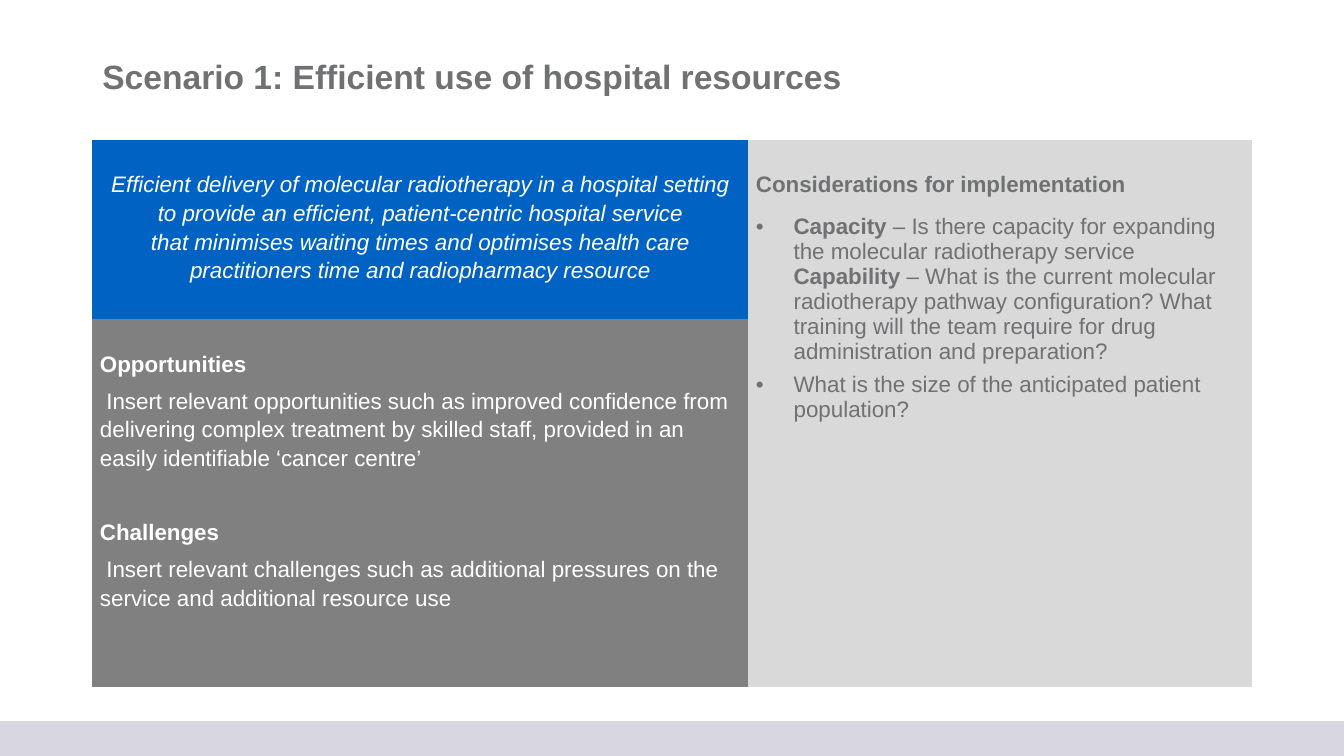
"""Build the hospital resources scenario slide."""
from copy import deepcopy
from dataclasses import dataclass

from lxml.etree import SubElement
from pptx import Presentation
from pptx.dml.color import RGBColor
from pptx.enum.shapes import MSO_SHAPE
from pptx.enum.text import MSO_ANCHOR, PP_ALIGN
from pptx.oxml.ns import qn
from pptx.util import Cm, Pt


@dataclass(frozen=True)
class Theme:
    font: str = "Arial"
    title_size: float = 24
    body_size: float = 16
    white: str = "FFFFFF"
    text: str = "707173"
    blue: str = "0063C3"
    dark: str = "808080"
    light: str = "D9D9D9"
    band: str = "D8D7E1"


THEME = Theme()
NO_GRID = "{2D5ABB26-0587-4C30-8999-92F81FD0307C}"


def style_run(r, color, size=THEME.body_size, bold=False, italic=False):
    r.font.name = THEME.font
    r.font.size = Pt(size)
    r.font.bold = bold
    r.font.italic = italic
    r.font.color.rgb = RGBColor.from_string(color)


def add_paragraph(tf, pieces, color, italic=False, spacing=1.15, before=6,
                  after=0, align=PP_ALIGN.LEFT):
    p = tf.paragraphs[0] if not tf.text else tf.add_paragraph()
    p.alignment = align
    p.line_spacing = spacing
    p.space_before, p.space_after = Pt(before), Pt(after)
    for text, bold in pieces:
        p.add_run().text = text
        style_run(p.runs[-1], color, bold=bold, italic=italic)
    return p


def set_indent(p, left, first, bullet=None):
    pPr = p._p.get_or_add_pPr()
    pPr.set("marL", str(Cm(left)))
    pPr.set("indent", str(Cm(first)))
    if bullet:
        SubElement(pPr, qn("a:buFont"), typeface=THEME.font)
        SubElement(pPr, qn("a:buChar"), char=bullet)


def add_band(s):
    sp = s.shapes.add_shape(MSO_SHAPE.RECTANGLE, 0, Cm(18.18), Cm(33.87), Cm(0.87))
    sp.shadow.inherit = False
    sp.fill.solid()
    sp.fill.fore_color.rgb = RGBColor.from_string(THEME.band)
    sp.line.color.rgb = RGBColor.from_string(THEME.band)
    sp.line.width = Pt(1)


def add_title(s, text):
    tf = s.shapes.add_textbox(Cm(2.33), Cm(1.02), Cm(29.21), Cm(1.9)).text_frame
    tf.word_wrap = True
    tf.vertical_anchor = MSO_ANCHOR.MIDDLE
    tf.text = text
    p = tf.paragraphs[0]
    p.line_spacing = 0.9
    style_run(p.runs[0], THEME.text, THEME.title_size, bold=True)


def add_grid(s, widths, heights, fills):
    frame = s.shapes.add_table(len(heights), len(widths), Cm(2.33), Cm(3.53),
                               Cm(sum(widths)), Cm(sum(heights)))
    table = frame.table
    table.first_row = table.horz_banding = False
    table._tbl.tblPr.find(qn("a:tableStyleId")).text = NO_GRID
    for col, width in zip(table.columns, widths):
        col.width = Cm(width)
    for row, height, colors in zip(table.rows, heights, fills):
        row.height = Cm(height)
        for cell, color in zip(row.cells, colors):
            cell.fill.solid()
            cell.fill.fore_color.rgb = RGBColor.from_string(color)
            cell.margin_left = cell.margin_right = Cm(0.19)
            cell.margin_top, cell.margin_bottom = Cm(0.73), 0
    return table


def fill_summary(tf):
    p = add_paragraph(tf, [(
        "Efficient delivery of molecular radiotherapy in a hospital setting to provide "
        "an efficient, patient-centric hospital service", False)],
        THEME.white, italic=True, before=0, after=6, align=PP_ALIGN.CENTER)
    p.add_line_break()
    r = p.add_run()
    r.text = ("that minimises waiting times and optimises health care practitioners "
              "time and radiopharmacy resource")
    style_run(r, THEME.white, italic=True)
    p._p.find(qn("a:br")).append(deepcopy(r._r.rPr))


def fill_sections(tf, sections):
    for i, (heading, body) in enumerate(sections):
        add_paragraph(tf, [(heading, True)], THEME.white, before=32.5 if i else 6)
        set_indent(add_paragraph(tf, [(body, False)], THEME.white), 0, 0.16)


def fill_considerations(tf, heading, items):
    add_paragraph(tf, [(heading, True)], THEME.text, after=6)
    for pieces in items:
        p = add_paragraph(tf, pieces, THEME.text, spacing=1.0)
        set_indent(p, 0.95, -0.95, "•")


def main():
    prs = Presentation()
    prs.slide_width, prs.slide_height = Cm(33.87), Cm(19.05)
    s = prs.slides.add_slide(prs.slide_layouts[6])
    add_band(s)
    add_title(s, "Scenario 1: Efficient use of hospital resources")
    table = add_grid(s, (16.53, 12.68), (4.52, 9.27),
                     ((THEME.blue, THEME.light), (THEME.dark, THEME.light)))
    table.cell(0, 1).merge(table.cell(1, 1))
    fill_summary(table.cell(0, 0).text_frame)
    fill_sections(table.cell(1, 0).text_frame, (
        ("Opportunities",
         "Insert relevant opportunities such as improved confidence from delivering "
         "complex treatment by skilled staff, provided in an easily identifiable "
         "‘cancer centre’"),
        ("Challenges",
         "Insert relevant challenges such as additional pressures on the service and "
         "additional resource use"),
    ))
    fill_considerations(table.cell(0, 1).text_frame, "Considerations for implementation", (
        (("Capacity ", True),
         ("– Is there capacity for expanding the molecular radiotherapy service ", False),
         ("Capability", True),
         (" – What is the current molecular radiotherapy pathway configuration? What "
          "training will the team require for drug administration and preparation?", False)),
        (("What is the size of the anticipated patient population?", False),),
    ))
    prs.save("out.pptx")


if __name__ == "__main__":
    main()
